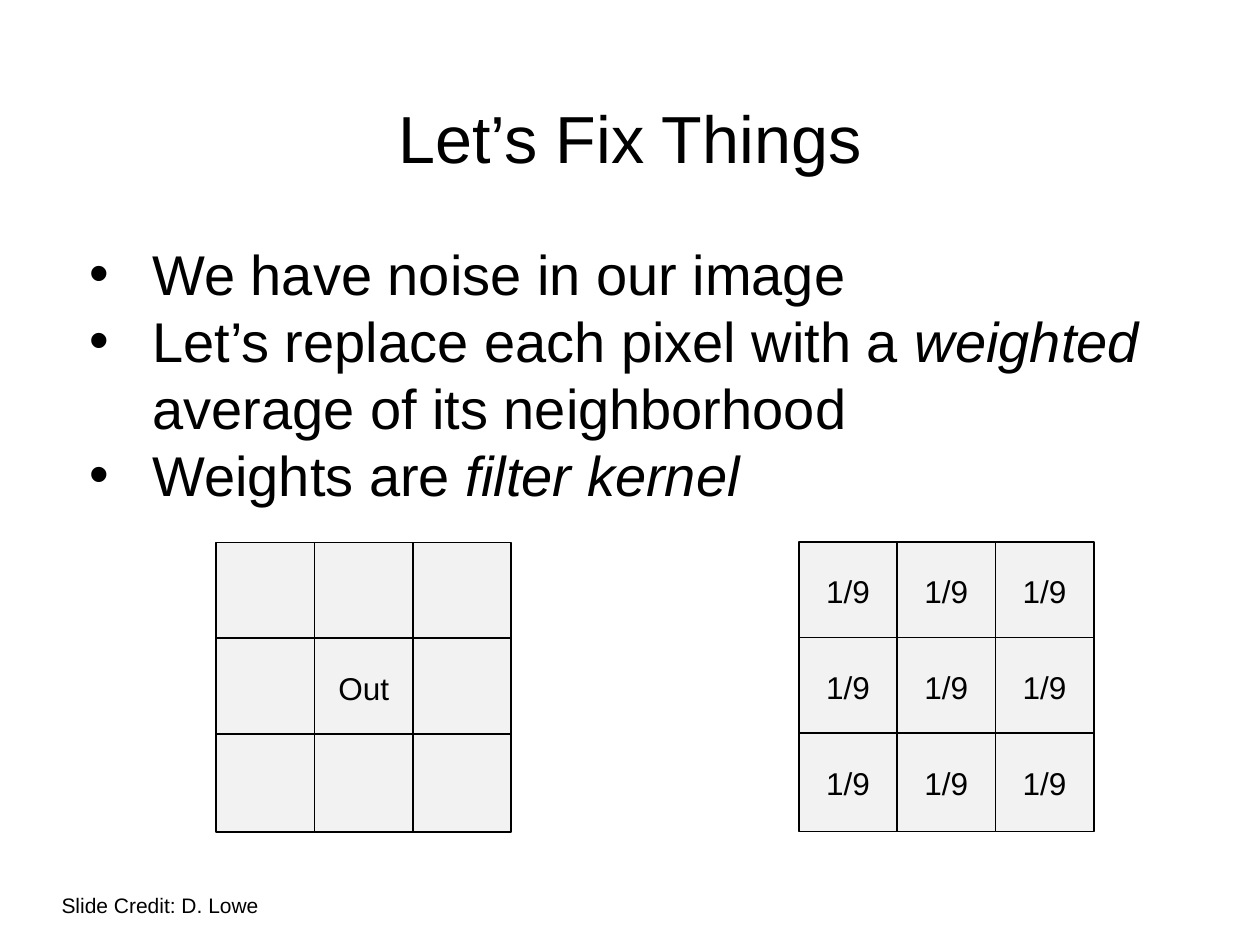
from lxml import etree
from pptx import Presentation
from pptx.dml import color
from pptx.enum import shapes, text
from pptx.oxml import ns
from pptx.util import Pt

BLACK = color.RGBColor(0x00, 0x00, 0x00)
PALE_GRAY = color.RGBColor(0xF2, 0xF2, 0xF2)
CELL = 56.16
ROW_STEP = 54.72


def write(para, words, size=18, italic=False, align=None, spacing=None):
    para.alignment = align
    para.line_spacing = spacing
    span = para.add_run()
    span.text = words
    span.font.name = "Arial"
    span.font.size = Pt(size)
    span.font.italic = italic
    span.font.color.rgb = BLACK


def add_text_box(page, left, top, width, height, anchor=text.MSO_ANCHOR.TOP):
    box = page.shapes.add_textbox(Pt(left), Pt(top), Pt(width), Pt(height))
    frame = box.text_frame
    frame.word_wrap = True
    frame.vertical_anchor = anchor
    return frame


def add_bullet(para, indent):
    properties = para._p.get_or_add_pPr()
    properties.set("marL", str(Pt(indent)))
    properties.set("indent", str(-Pt(indent)))
    font = etree.SubElement(properties, ns.qn("a:buFont"))
    font.set("typeface", "Arial")
    mark = etree.SubElement(properties, ns.qn("a:buChar"))
    mark.set("char", "•")


def add_title(page, left, top, width, height):
    frame = add_text_box(page, left, top, width, height, text.MSO_ANCHOR.MIDDLE)
    write(frame.paragraphs[0], "Let’s Fix Things", size=38,
          align=text.PP_ALIGN.CENTER, spacing=0.9)


def add_points(page, left, top, width, height):
    points = [
        [("We have noise in our image", False)],
        [("Let’s replace each pixel with a ", False), ("weighted", True),
         (" average of its neighborhood", False)],
        [("Weights are ", False), ("filter kernel", True)],
    ]
    frame = add_text_box(page, left, top, width, height)
    for index, point in enumerate(points):
        para = frame.add_paragraph() if index else frame.paragraphs[0]
        add_bullet(para, 36)
        for words, italic in point:
            write(para, words, size=32, italic=italic)


def add_pixel_grid(page, left, top, labels):
    group = page.shapes.add_group_shape()
    for row, line in enumerate(labels):
        for column, label in enumerate(line):
            box = group.shapes.add_shape(
                shapes.MSO_SHAPE.RECTANGLE, Pt(left + column * CELL),
                Pt(top + row * ROW_STEP), Pt(CELL), Pt(CELL))
            box.shadow.inherit = False
            box.fill.solid()
            box.fill.fore_color.rgb = PALE_GRAY
            box.line.color.rgb = BLACK
            box.line.width = Pt(1)
            if label:
                box.text_frame.vertical_anchor = text.MSO_ANCHOR.MIDDLE
                write(box.text_frame.paragraphs[0], label,
                      align=text.PP_ALIGN.CENTER)


def add_credit(page, left, top, width, height):
    frame = add_text_box(page, left, top, width, height)
    write(frame.paragraphs[0], "Slide Credit: D. Lowe", size=12)


def main():
    deck = Presentation()
    deck.slide_width, deck.slide_height = Pt(720), Pt(540)
    page = deck.slides.add_slide(deck.slide_layouts[6])
    add_title(page, 49.7, 28.8, 620.6, 104.4)
    add_credit(page, 28.1, 506.2, 434.2, 21.6)
    add_points(page, 43.9, 133.2, 649.4, 162.7)
    add_pixel_grid(page, 456.5, 309.6, [["1/9"] * 3] * 3)
    add_pixel_grid(page, 123.6, 310, [[""] * 3, ["", "Out", ""], [""] * 3])
    deck.save("out.pptx")


if __name__ == "__main__":
    main()
